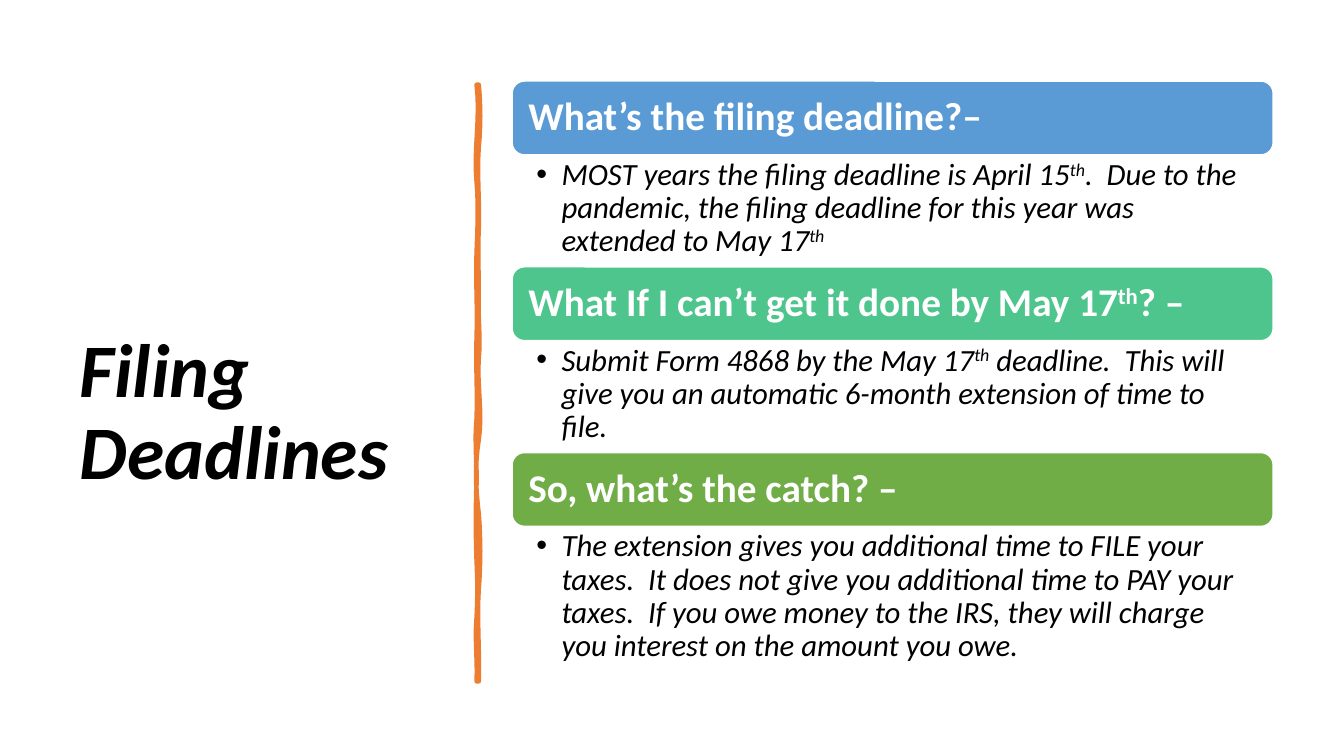
from lxml.etree import SubElement
from pptx import Presentation
from pptx.dml.color import RGBColor
from pptx.enum.shapes import MSO_SHAPE
from pptx.enum.text import MSO_ANCHOR, MSO_AUTO_SIZE, PP_ALIGN
from pptx.oxml.ns import qn
from pptx.util import Pt

# Content: within each text tuple, every second piece is superscript
TITLE = "Filing Deadlines"
TOPICS = [
    {"head": ("What’s the filing deadline?–",),
     "body": ("MOST years the filing deadline is April 15", "th",
              ".  Due to the pandemic, the filing deadline for this year was "
              "extended to May 17", "th"),
     "fill": "blue", "tall": 80},
    {"head": ("What If I can’t get it done by May 17", "th", "? –"),
     "body": ("Submit Form 4868 by the May 17", "th",
              " deadline.  This will give you an automatic 6-month extension "
              "of time to file."),
     "fill": "teal", "tall": 80},
    {"head": ("So, what’s the catch? –",),
     "body": ("The extension gives you additional time to FILE your taxes.  "
              "It does not give you additional time to PAY your taxes.  If you "
              "owe money to the IRS, they will charge you interest on the "
              "amount you owe.",),
     "fill": "green", "tall": 103},
]

THEME = {
    "font": "Calibri",
    "title": 54, "head": 28, "body": 22,
    "black": RGBColor(0x00, 0x00, 0x00), "white": RGBColor(0xFF, 0xFF, 0xFF),
    "orange": RGBColor(0xED, 0x7D, 0x31), "blue": RGBColor(0x5B, 0x9B, 0xD5),
    "teal": RGBColor(0x4D, 0xC5, 0x8D), "green": RGBColor(0x70, 0xAD, 0x47),
}

# Divider edges: end height, then the sideways bend at each third of the way
TOP, BASE = 60.5, 486.7
RIGHT = [(105, 1.4, 1.4), (163, -1.4, 0.7), (212, -0.7, 0), (256, -0.7, 1.4),
         (314, -1.4, 2.9), (367, -2.9, -2.2), (420.5, 1.4, 1.4),
         (BASE, -1.4, 0.7)]
LEFT = [(441, 0.7, -1.4), (401, 0.7, 0.7), (343, -0.7, -0.7), (299, 0, -1.4),
        (241, 0.7, -0.7), (180, 0.7, -0.7), (130, 0.7, 1.4), (TOP, -2.2, 2.9)]
STEPS = 8

# Topic column
COL_X, COL_Y, COL_W, HEAD_H = 365.8, 57.9, 543.6, 52.7


def trace(x, y, bends):
    """Points along a wavy edge that starts at x, y."""
    points = [(Pt(x), Pt(y))]
    for end, near, far in bends:
        for step in range(1, STEPS + 1):
            t = step / STEPS
            shift = 3 * t * (1 - t) * ((1 - t) * near + t * far)
            points.append((Pt(x + shift), Pt(y + (end - y) * t)))
        y = end
    return points


def write(frame, parts, size, color, bold=False, italic=False):
    """Fill the first paragraph of a frame run by run."""
    para = frame.paragraphs[0]
    para.alignment = PP_ALIGN.LEFT
    para.line_spacing = 0.9
    for i, part in enumerate(parts):
        run = para.add_run()
        run.text = part
        font = run.font
        font.name, font.size = THEME["font"], Pt(THEME[size])
        font.bold, font.italic = bold, italic
        font.color.rgb = THEME[color]
        if i % 2:
            run._r.get_or_add_rPr().set("baseline", "30000")
    return para


def inset(frame, left, top, right, base):
    frame.word_wrap = True
    frame.margin_left, frame.margin_right = Pt(left), Pt(right)
    frame.margin_top, frame.margin_bottom = Pt(top), Pt(base)


def bullet(para):
    props = para._p.get_or_add_pPr()
    props.set("marL", str(Pt(18)))
    props.set("indent", str(Pt(-18)))
    SubElement(props, qn("a:buFont")).set("typeface", "Arial")
    SubElement(props, qn("a:buChar")).set("char", "•")


def main():
    deck = Presentation()
    deck.slide_width, deck.slide_height = Pt(960), Pt(540)
    slide = deck.slides.add_slide(deck.slide_layouts[5])
    shapes = slide.shapes

    # Title
    title = shapes.title
    title.left, title.top = Pt(49.7), Pt(50.4)
    title.width, title.height = Pt(269.3), Pt(490.3)
    title.text_frame.vertical_anchor = MSO_ANCHOR.MIDDLE
    title.text_frame.auto_size = MSO_AUTO_SIZE.NONE
    inset(title.text_frame, 7.2, 3.6, 7.2, 3.6)
    write(title.text_frame, [TITLE], "title", "black", True, True)

    # Hand-drawn divider
    edge = trace(342, TOP, RIGHT) + trace(340.5, BASE, LEFT)
    pen = shapes.build_freeform(*edge[0], scale=1.0)
    pen.add_line_segments(edge[1:], close=True)
    rule = pen.convert_to_shape()
    rule.shadow.inherit = False
    rule.fill.solid()
    rule.fill.fore_color.rgb = THEME["orange"]
    rule.line.color.rgb = THEME["orange"]
    rule.line.width = Pt(3.25)
    SubElement(rule.line._get_or_add_ln(), qn("a:round"))

    # Topics: a coloured bar with its bullet below
    y = COL_Y
    for topic in TOPICS:
        bar = shapes.add_shape(MSO_SHAPE.ROUNDED_RECTANGLE, Pt(COL_X), Pt(y),
                               Pt(COL_W), Pt(HEAD_H))
        bar.shadow.inherit = False
        bar.fill.solid()
        bar.fill.fore_color.rgb = THEME[topic["fill"]]
        bar.line.color.rgb = THEME["white"]
        bar.line.width = Pt(1)
        bar.text_frame.vertical_anchor = MSO_ANCHOR.MIDDLE
        inset(bar.text_frame, 9, 6, 9, 6)
        write(bar.text_frame, topic["head"], "head", "white", bold=True)
        y += HEAD_H

        note = shapes.add_textbox(Pt(COL_X), Pt(y), Pt(COL_W), Pt(topic["tall"]))
        inset(note.text_frame, 17.3, 2.8, 15.6, 2.8)
        bullet(write(note.text_frame, topic["body"], "body", "black", italic=True))
        y += topic["tall"]

    deck.save("out.pptx")


if __name__ == "__main__":
    main()
